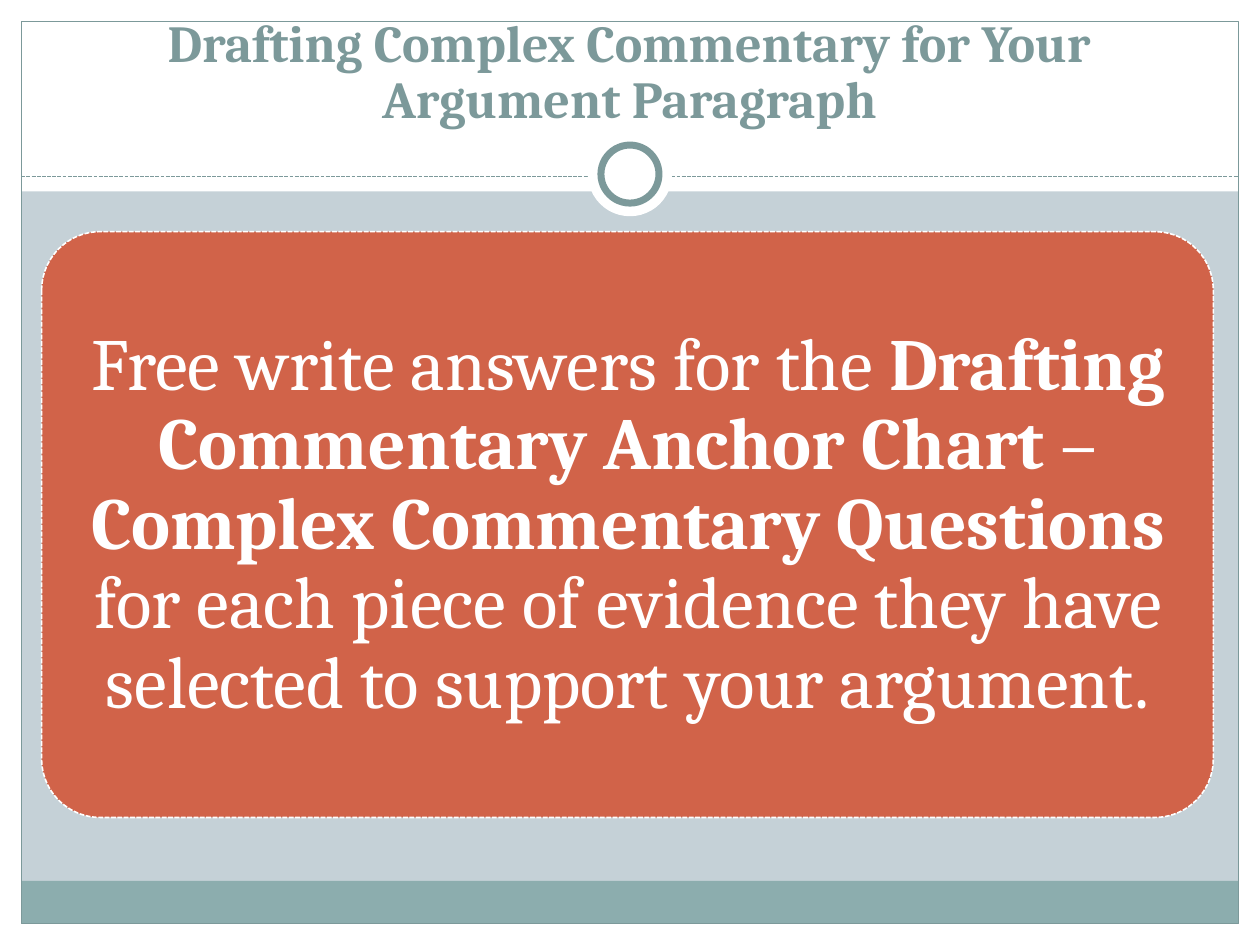
from lxml import etree
from pptx import Presentation
from pptx.dml.color import RGBColor
from pptx.enum import dml, shapes, text
from pptx.oxml import ns
from pptx.util import Cm, Pt

WHITE = RGBColor(0xFF, 0xFF, 0xFF)
MIST = RGBColor(0xC5, 0xD1, 0xD7)
SAGE = RGBColor(0x8C, 0xAD, 0xAE)
TEAL = RGBColor(0x7C, 0x99, 0x9A)
RUST = RGBColor(0xD1, 0x63, 0x49)
FONT = "Cambria"

# Content
TITLE = "Drafting Complex Commentary for Your Argument Paragraph"
TASK = [  # wording, bold
    ("Free write answers for the ", False),
    ("Drafting Commentary Anchor Chart", True),
    (" – ", False),
    ("Complex Commentary Questions", True),
    (" for each piece of evidence they have selected to support your argument.", False),
]

# Layout in centimetres
WIDTH, HEIGHT, MARGIN = 25.4, 19.05, 0.43
HEADER, FOOTER = 3.86, 0.86
RULE_Y = 3.56
RING_X, RING_Y = WIDTH / 2, 3.51
INNER_W, INNER_H = WIDTH - 2 * MARGIN, HEIGHT - 2 * MARGIN

RECT = shapes.MSO_SHAPE.RECTANGLE
OVAL = shapes.MSO_SHAPE.OVAL
ROUNDED = shapes.MSO_SHAPE.ROUNDED_RECTANGLE


def set_values(target, values):
    for name, value in values.items():
        setattr(target, name, value)


def set_line(line, color, width, dashed=False):
    line.color.rgb = color
    line.width = Pt(width)
    if dashed:
        line.dash_style = dml.MSO_LINE.SQUARE_DOT


def add_box(page, kind, place, fill=None, line=None):
    box = page.shapes.add_shape(kind, *map(Cm, place))
    box.shadow.inherit = False
    if fill is None:
        box.fill.background()
    else:
        box.fill.solid()
        box.fill.fore_color.rgb = fill
    if line is None:
        box.line.fill.background()
    else:
        set_line(box.line, *line)
    return box


def add_circle(page, diameter, line=None):
    place = (RING_X - diameter / 2, RING_Y - diameter / 2, diameter, diameter)
    return add_box(page, OVAL, place, WHITE, line)


def add_span(para, wording, size, color, bold):
    span = para.add_run()
    span.text = wording
    set_values(span.font, {"name": FONT, "size": Pt(size), "bold": bold})
    span.font.color.rgb = color


def format_frame(frame, anchor, inset_x, inset_y):
    set_values(frame, {
        "word_wrap": True, "auto_size": text.MSO_AUTO_SIZE.NONE,
        "vertical_anchor": anchor,
        "margin_left": Cm(inset_x), "margin_right": Cm(inset_x),
        "margin_top": Cm(inset_y), "margin_bottom": Cm(inset_y),
    })


deck = Presentation()
set_values(deck, {"slide_width": Cm(WIDTH), "slide_height": Cm(HEIGHT)})
page = deck.slides.add_slide(deck.slide_layouts[5])
page.background.fill.solid()
page.background.fill.fore_color.rgb = MIST

# White margins, footer band and frame
for place in [
    (0, HEIGHT - MARGIN, WIDTH, MARGIN),
    (0, 0, WIDTH, HEADER),
    (0, 0, MARGIN, HEIGHT),
    (WIDTH - MARGIN, 0, MARGIN, HEIGHT),
]:
    add_box(page, RECT, place, WHITE)
add_box(page, RECT, (MARGIN, HEIGHT - MARGIN - FOOTER, INNER_W, FOOTER), SAGE)
add_box(page, RECT, (MARGIN, MARGIN, INNER_W, INNER_H), line=(TEAL, 0.75))

# Dashed rule under the title, with the ring on it
rule = page.shapes.add_connector(
    shapes.MSO_CONNECTOR.STRAIGHT,
    *map(Cm, (MARGIN, RULE_Y, WIDTH - MARGIN, RULE_Y)))
set_line(rule.line, TEAL, 0.75, dashed=True)
etree.SubElement(rule.element.spPr, ns.qn("a:effectLst"))
add_circle(page, 1.7)
add_circle(page, 1.17, (TEAL, 4))

# Title, brought in front of the white header
title = page.shapes.title
set_values(title, {"left": Cm(0.84), "top": Cm(0.64),
                   "width": Cm(23.7), "height": Cm(2.11)})
page.shapes.element.append(title.element)
format_frame(title.text_frame, text.MSO_ANCHOR.BOTTOM, 0.25, 0.13)
para = title.text_frame.paragraphs[0]
set_values(para, {"alignment": text.PP_ALIGN.CENTER, "line_spacing": 0.9})
add_span(para, TITLE, 29.7, TEAL, True)

# Task card and its wording
card = add_box(page, ROUNDED, (0.84, 4.67, 23.62, 11.81), RUST, (WHITE, 0.9, True))
card.adjustments[0] = 0.1
task = page.shapes.add_textbox(*map(Cm, (1.19, 5.03, 22.94, 11.13)))
format_frame(task.text_frame, text.MSO_ANCHOR.MIDDLE, 0.23, 0.15)
para = task.text_frame.paragraphs[0]
set_values(para, {"alignment": text.PP_ALIGN.CENTER, "line_spacing": 0.9})
for wording, bold in TASK:
    add_span(para, wording, 42, WHITE, bold)

deck.save("out.pptx")
